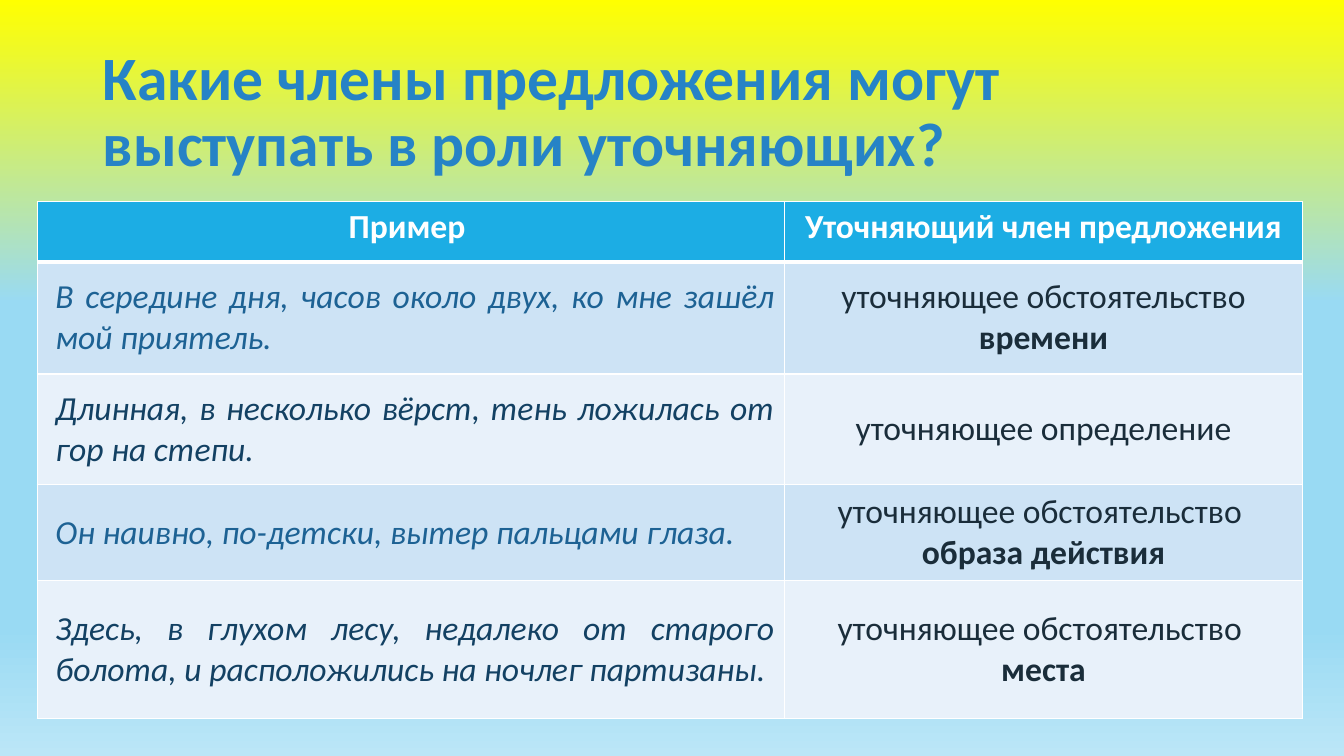
from copy import deepcopy

from lxml.etree import SubElement
from pptx import Presentation
from pptx.dml.color import RGBColor
from pptx.enum.text import MSO_ANCHOR as Anchor, MSO_AUTO_SIZE as AutoSize, PP_ALIGN as Align
from pptx.oxml.ns import qn
from pptx.util import Inches, Pt

SLIDE_WIDTH, SLIDE_HEIGHT = Inches(13.33), Inches(7.5)
FONT = "Calibri"
WHITE, TITLE_BLUE, HEADER_BLUE, TERM_COLOR = "FFFFFF", "2683C6", "1CADE4", "1A2D3A"
BACKGROUND_STOPS = [(0, "FFFF00"), (0.4, "99DAF3"), (0.83, "99DAF3"), (1, "BBE6F7")]
BANDS = [("CDE3F5", "1D6294"), ("E8F1FA", "134163")]  # fill, example colour

TITLE = "Какие члены предложения могут выступать в роли уточняющих?"
HEADINGS = ["Пример ", "Уточняющий член предложения"]
COLUMN_WIDTHS = [7.41, 5.14]
ROW_HEIGHTS = [0.6, 1.11, 1.1, 0.95, 1.37]
CIRCUMSTANCE = "уточняющее обстоятельство "
# Each term is a list of paragraphs; a paragraph is a list of (text, bold) runs.
EXAMPLES = [
    ("В середине дня, часов около двух, ко мне зашёл мой приятель.",
     [[(CIRCUMSTANCE, False), ("времени", True)]]),
    ("Длинная, в несколько вёрст, тень ложилась от гор на степи.",
     [[("уточняющее определение", False)]]),
    ("Он наивно, по-детски, вытер пальцами глаза.",
     [[(CIRCUMSTANCE, False)], [("образа действия", True)]]),
    ("Здесь, в глухом лесу, недалеко от старого болота, и расположились на ночлег партизаны.",
     [[(CIRCUMSTANCE, False)], [("места", True)]]),
]


def rgb(hex_color):
    return RGBColor.from_string(hex_color)


def format_paragraph(paragraph, size, color, align, bold=False, italic=False):
    paragraph.alignment = align
    font = paragraph.font
    font.name, font.size, font.bold, font.italic = FONT, Pt(size), bold, italic
    font.color.rgb = rgb(color)


def paint_background(slide):
    fill = slide.background.fill
    fill.gradient()
    fill.gradient_angle = 270
    stop_list = slide.element.find(".//" + qn("a:gsLst"))
    while len(stop_list) < len(BACKGROUND_STOPS):
        stop_list.append(deepcopy(stop_list[0]))
    for stop, (position, color) in zip(fill.gradient_stops, BACKGROUND_STOPS):
        stop.position = position
        stop.color.rgb = rgb(color)


def add_title(slide):
    title = slide.shapes.title
    title.left, title.top = int(SLIDE_WIDTH * 0.069), Inches(0.4)
    title.width, title.height = Inches(11.5), Inches(1.45)
    frame = title.text_frame
    frame.text = TITLE
    frame.word_wrap, frame.auto_size = True, AutoSize.NONE
    frame.vertical_anchor = Anchor.MIDDLE
    paragraph = frame.paragraphs[0]
    paragraph.line_spacing = 0.9
    format_paragraph(paragraph, 44, TITLE_BLUE, Align.LEFT, bold=True)


def style_cell(cell, fill, anchor, edges):
    """Fill and anchor a cell; edges maps a border tag to its width in points."""
    cell.vertical_anchor = anchor
    properties = cell._tc.get_or_add_tcPr()
    for tag, width in edges.items():
        line = SubElement(properties, qn(f"a:{tag}"), w=str(Pt(width)))
        SubElement(SubElement(line, qn("a:solidFill")), qn("a:srgbClr"), val=WHITE)
    cell.fill.solid()
    cell.fill.fore_color.rgb = rgb(fill)


def write_cell(cell, paragraphs, color, align, bold=False, italic=False):
    frame = cell.text_frame
    for index, runs in enumerate(paragraphs):
        paragraph = frame.add_paragraph() if index else frame.paragraphs[0]
        format_paragraph(paragraph, 24, color, align, bold, italic)
        for text, run_bold in runs:
            run = paragraph.add_run()
            run.text = text
            run.font.bold = run_bold


def add_examples_table(slide):
    table = slide.shapes.add_table(
        len(ROW_HEIGHTS), len(COLUMN_WIDTHS), Inches(0.37), Inches(2),
        Inches(sum(COLUMN_WIDTHS)), Inches(sum(ROW_HEIGHTS))).table
    for column, width in zip(table.columns, COLUMN_WIDTHS):
        column.width = Inches(width)
    for row, height in zip(table.rows, ROW_HEIGHTS):
        row.height = Inches(height)

    thin = {"lnL": 1, "lnR": 1, "lnT": 1, "lnB": 1}
    for column, heading in enumerate(HEADINGS):
        cell = table.cell(0, column)
        style_cell(cell, HEADER_BLUE, Anchor.TOP, thin | {"lnB": 3})
        write_cell(cell, [[(heading, True)]], WHITE, Align.CENTER, bold=True)

    for row, (example, term) in enumerate(EXAMPLES, start=1):
        fill, example_color = BANDS[(row - 1) % len(BANDS)]
        edges = thin | {"lnT": 3 if row == 1 else 1}
        example_cell, term_cell = table.cell(row, 0), table.cell(row, 1)
        for cell in (example_cell, term_cell):
            style_cell(cell, fill, Anchor.MIDDLE, edges)
        write_cell(example_cell, [[(example, False)]], example_color, Align.JUSTIFY, italic=True)
        indent = example_cell.text_frame.paragraphs[0]._p.get_or_add_pPr()
        indent.set("marL", str(Inches(0.08)))
        write_cell(term_cell, term, TERM_COLOR, Align.CENTER)


def main():
    presentation = Presentation()
    presentation.slide_width, presentation.slide_height = SLIDE_WIDTH, SLIDE_HEIGHT
    slide = presentation.slides.add_slide(presentation.slide_layouts[5])
    paint_background(slide)
    add_title(slide)
    add_examples_table(slide)
    presentation.save("out.pptx")


if __name__ == "__main__":
    main()
